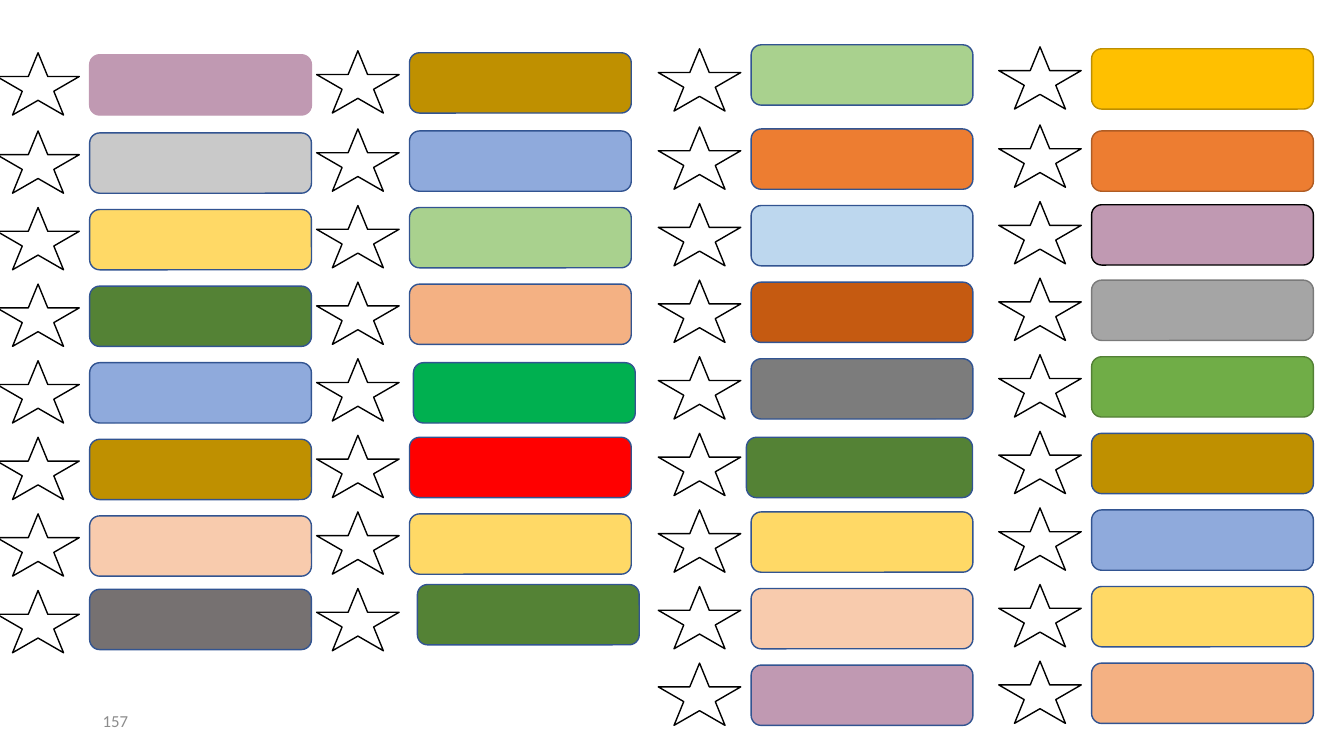
"""Builds a slide with four columns of stars, each beside a coloured bar."""
from pptx import Presentation
from pptx import util as u
from pptx.dml.color import RGBColor
from pptx.enum import shapes, text

COLORS = {
    "white": "FFFFFF", "black": "000000", "navy": "325491", "number": "8C8C8C",
    "mauve": "C099B2", "silver": "C9C9C9", "yellow": "FFD966", "forest": "548235",
    "blue": "8FAADC", "ochre": "BF9000", "peach": "F8CBAD", "taupe": "767171",
    "mint": "A9D18E", "salmon": "F4B183", "emerald": "00B050", "red": "FF0000",
    "orange": "ED7D31", "sky": "BDD7EE", "rust": "C55A11", "grey": "7C7C7C",
    "gold": "FFC000", "ash": "A5A5A5", "green": "70AD47",
    "gold_edge": "BD8E00", "orange_edge": "AF5C24", "ash_edge": "7A7A7A",
    "green_edge": "538035",
}
COLUMNS = [
    (-0.08, "mauve silver yellow forest blue ochre peach taupe"),
    (7.98, "ochre blue mint salmon emerald red yellow forest"),
    (16.59, "mint orange sky rust grey forest yellow peach mauve"),
    (25.17, "gold orange mauve ash green ochre blue yellow salmon"),
]
EDGES = {(0, 0): "mauve", (3, 0): "gold_edge", (3, 1): "orange_edge",
         (3, 2): "black", (3, 3): "ash_edge", (3, 4): "green_edge"}
SHIFTS = {(0, 7): (0, -0.08), (1, 4): (0.1, 0.05), (1, 7): (0.2, -0.15),
          (2, 0): (0, -0.15), (2, 5): (-0.12, 0.05), (3, 1): (0, 0.1),
          (3, 2): (0, 0.03)}
WIDTHS = {(2, 5): 5.7}
BAR_W, BAR_H, STAR_W, STAR_H = 5.59, 1.52, 2.08, 1.57
BAR_DX, BAR_DY = 2.34, 0.05
PITCH, FIRST_GAP = 1.93, 1.97


class Deck:
    """Holds the style and the current slide."""

    def __init__(self):
        self.prs = Presentation()
        self.prs.slide_width, self.prs.slide_height = u.Cm(33.87), u.Cm(19.05)
        self.s = self.prs.slides.add_slide(self.prs.slide_layouts[6])
        self.font = {"name": "Calibri", "size": u.Pt(12)}
        self.frame = {"word_wrap": True, "vertical_anchor": text.MSO_ANCHOR.MIDDLE}

    def color(self, name):
        """Returns the named colour."""
        return RGBColor.from_string(COLORS[name])

    def shape(self, kind, box, fill, edge):
        """Adds a filled, outlined preset shape."""
        sp = self.s.shapes.add_shape(kind, *map(u.Cm, box))
        sp.shadow.inherit = False
        sp.fill.solid()
        sp.fill.fore_color.rgb = self.color(fill)
        sp.line.color.rgb = self.color(edge)
        sp.line.width = u.Pt(1)

    def bar(self, x, y, w, fill, edge):
        """Adds a rounded bar."""
        self.shape(shapes.MSO_SHAPE.ROUNDED_RECTANGLE, (x, y, w, BAR_H), fill, edge)

    def star(self, x, y):
        """Adds an empty star."""
        self.shape(shapes.MSO_SHAPE.STAR_5_POINT, (x, y, STAR_W, STAR_H),
                   "white", "black")

    def label(self, box, words, color):
        """Adds a text box."""
        tf = self.s.shapes.add_textbox(*map(u.Cm, box)).text_frame
        for key, value in self.frame.items():
            setattr(tf, key, value)
        p = tf.paragraphs[0]
        p.alignment = text.PP_ALIGN.LEFT
        r = p.add_run()
        r.text = words
        for key, value in self.font.items():
            setattr(r.font, key, value)
        r.font.color.rgb = self.color(color)


def main():
    """Draws the columns and the page number."""
    deck = Deck()
    for col, (x, fills) in enumerate(COLUMNS):
        second_y = 3.3 - 0.05 * col
        for row, fill in enumerate(fills.split()):
            y = second_y + (row - 1) * PITCH if row else second_y - FIRST_GAP
            cell = (col, row)
            dx, dy = SHIFTS.get(cell, (0, 0))
            deck.bar(x + BAR_DX + dx, y + BAR_DY + dy, WIDTHS.get(cell, BAR_W),
                     fill, EDGES.get(cell, "navy"))
            deck.star(x, y)
    deck.label((2.34, 17.65, 7.62, 1.02), "157", "number")
    deck.prs.save("out.pptx")


if __name__ == "__main__":
    main()
